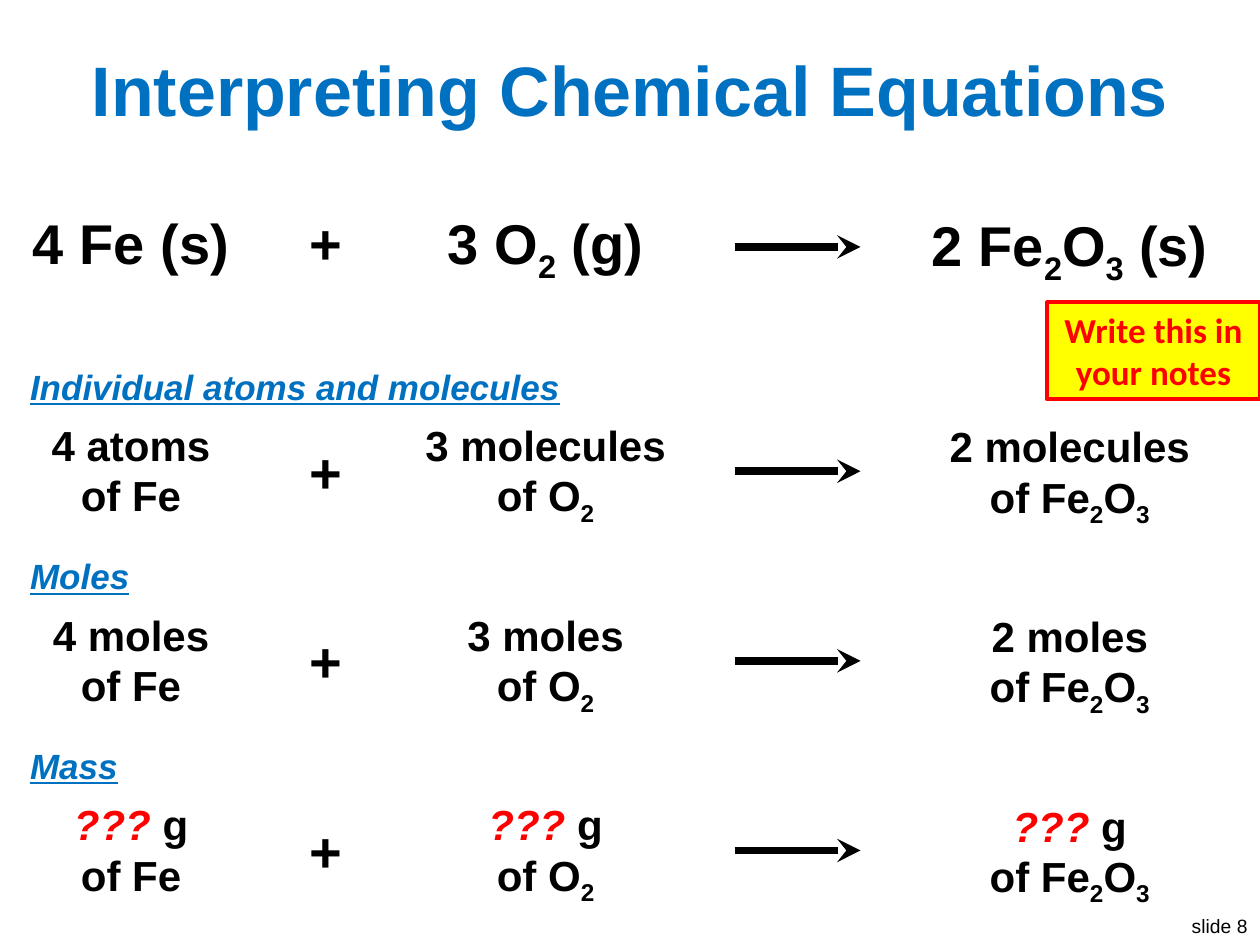
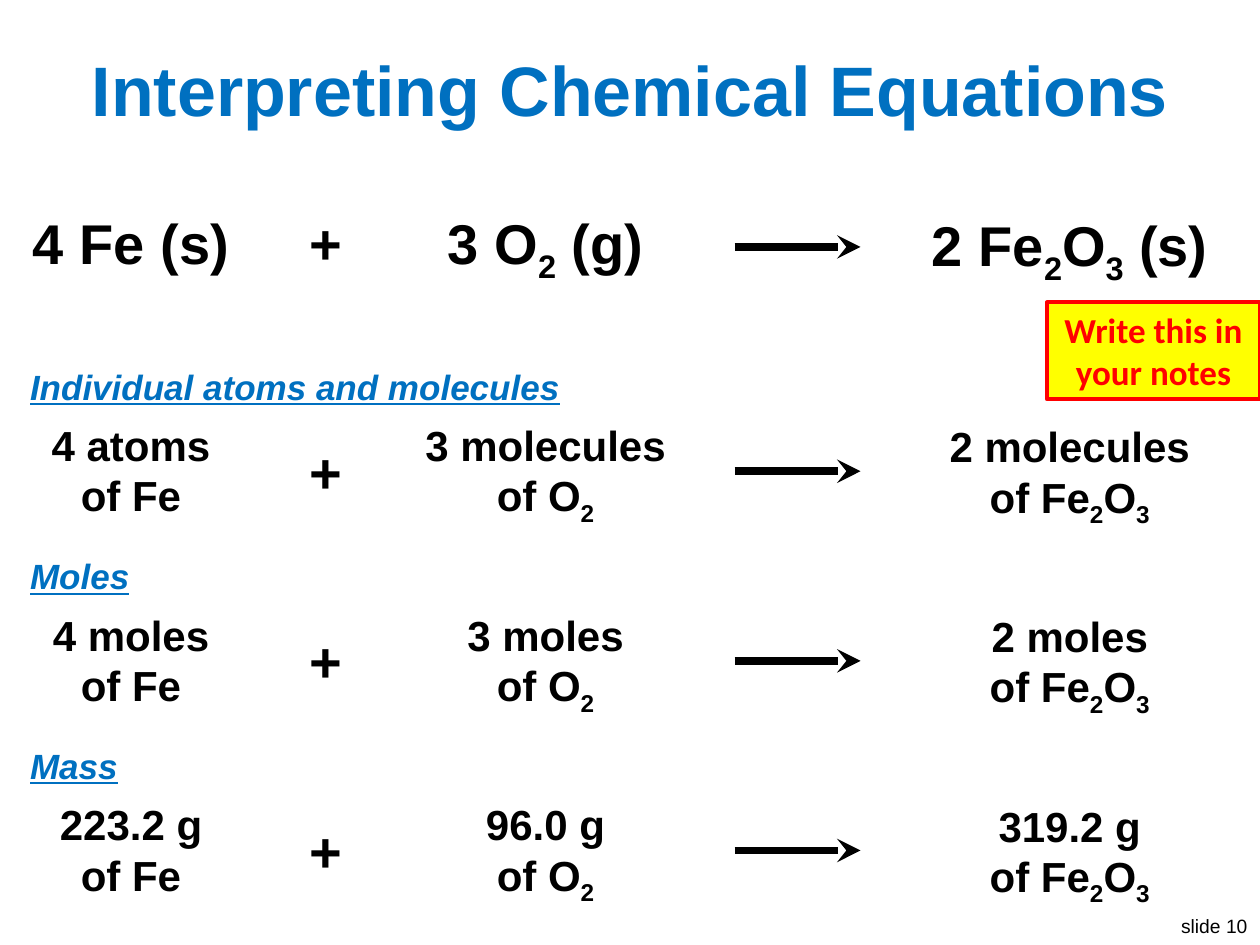
from lxml import etree
from pptx import Presentation
from pptx.dml.color import RGBColor
from pptx.enum.shapes import MSO_CONNECTOR, MSO_SHAPE
from pptx.enum.text import MSO_ANCHOR, MSO_AUTO_SIZE, PP_ALIGN
from pptx.oxml.ns import qn
from pptx.util import Inches, Pt

BLACK = RGBColor(0x00, 0x00, 0x00)
BLUE = RGBColor(0x00, 0x70, 0xC0)
RED = RGBColor(0xFF, 0x00, 0x00)
YELLOW = RGBColor(0xFF, 0xFF, 0x00)
WHITE = RGBColor(0xFF, 0xFF, 0xFF)

LEFT, CENTER, RIGHT = PP_ALIGN.LEFT, PP_ALIGN.CENTER, PP_ALIGN.RIGHT
MIDDLE = MSO_ANCHOR.MIDDLE
GROW = MSO_AUTO_SIZE.SHAPE_TO_FIT_TEXT
STRAIGHT = MSO_CONNECTOR.STRAIGHT
RECTANGLE = MSO_SHAPE.RECTANGLE

FE_CENTER, PLUS_CENTER, O2_CENTER, FE2O3_CENTER = 1.04, 2.59, 4.33, 8.49
TERM_CENTERS = (FE_CENTER, O2_CENTER, FE2O3_CENTER)
ARROW_START, ARROW_END = 5.83, 6.83
PRODUCT_DROP = 0.01
EQUATION_TOP = 1.61
FIRST_SECTION_TOP, SECTION_PITCH = 3.28, 1.505
UNKNOWN = "???"
SUBSTANCES = ("of Fe", "of O_2", "of Fe_2O_3")

EQUATION = (("4 Fe (s)", 1.77), ("3 O_2 (g)", 1.79), ("2 Fe_2O_3 (s)", 2.45))
ATOMS = ("Individual atoms and molecules", 4.44,
         (("4 atoms", 1.47), ("3 molecules", 2.13), ("2 molecules", 2.13)))
MOLES = ("Moles", 1, (("4 moles", 1.46), ("3 moles", 1.46), ("2 moles", 1.51)))
UNKNOWN_MASS = ("Mass", 0.9, (("??? g", 1.12), ("??? g", 1.12), ("??? g", 1.51)))
KNOWN_MASS = ("Mass", 0.9, (("223.2 g", 1.34), ("96.0 g", 1.16), ("319.2 g", 1.51)))


def add_run(paragraph, text):
    run = paragraph.add_run()
    run.text = text
    return run


def add_formula(paragraph, text):
    if text.startswith(UNKNOWN):
        unknown = add_run(paragraph, UNKNOWN)
        unknown.font.italic = True
        unknown.font.color.rgb = RED
        text = text.removeprefix(UNKNOWN)
    first, *subscripted = text.split("_")
    add_run(paragraph, first)
    for part in subscripted:
        subscript = add_run(paragraph, part[0])
        subscript.font._element.set("baseline", "-25000")
        if part[1:]:
            add_run(paragraph, part[1:])


def write_lines(frame, lines, size, color, align=CENTER, name="Arial", bold=True):
    for index, line in enumerate(lines):
        paragraph = frame.add_paragraph() if index else frame.paragraphs[0]
        paragraph.alignment = align
        font = paragraph.font
        font.name, font.size, font.bold = name, Pt(size), bold
        font.color.rgb = color
        add_formula(paragraph, line)


def add_text(shapes, left, top, width, height, lines, size, color=BLACK,
             align=CENTER, bold=True):
    box = shapes.add_textbox(Inches(left), Inches(top), Inches(width), Inches(height))
    box.text_frame.word_wrap = False
    box.text_frame.auto_size = GROW
    write_lines(box.text_frame, lines, size, color, align, bold=bold)
    return box


def add_arrow(shapes, y):
    arrow = shapes.add_connector(STRAIGHT, Inches(ARROW_START), Inches(y),
                                 Inches(ARROW_END), Inches(y))
    arrow.line.color.rgb = BLACK
    arrow.line.width = Pt(4.5)
    line = arrow.line._get_or_add_ln()
    etree.SubElement(line, qn("a:tailEnd"), type="stealth")
    etree.SubElement(arrow._element.spPr, qn("a:effectLst"))


def add_reaction(shapes, terms, top, height, size, plus_top, arrow_y):
    for index, ((lines, width), center) in enumerate(zip(terms, TERM_CENTERS)):
        term_top = top + (PRODUCT_DROP if index == 2 else 0)
        add_text(shapes, center - width / 2, term_top, width, height, lines, size)
    add_text(shapes, PLUS_CENTER - 0.23, plus_top, 0.46, 0.64, ["+"], 32)
    add_arrow(shapes, arrow_y)


def add_equation(slide):
    shapes = slide.shapes.add_group_shape().shapes
    terms = [([formula], width) for formula, width in EQUATION]
    add_reaction(shapes, terms, EQUATION_TOP, 0.64, 32,
                 EQUATION_TOP, EQUATION_TOP + 0.35)


def add_section(slide, section, top):
    heading, heading_width, amounts = section
    shapes = slide.shapes.add_group_shape().shapes
    terms = [([amount, substance], width)
             for (amount, width), substance in zip(amounts, SUBSTANCES)]
    add_reaction(shapes, terms, top, 0.91, 24, top + 0.14, top + 0.46)
    box = add_text(shapes, 0.14, top - 0.43, heading_width, 0.44, [heading], 20,
                   BLUE, LEFT)
    font = box.text_frame.paragraphs[0].font
    font.italic = font.underline = True


def add_title(slide, text):
    title = add_text(slide.shapes, 0.2, 0.3, 9.6, 0.8, [text], 40, BLUE)
    title.text_frame.word_wrap = True
    title.text_frame.auto_size = MSO_AUTO_SIZE.NONE
    title.text_frame.vertical_anchor = MIDDLE


def add_reminder(slide, text):
    reminder = slide.shapes.add_shape(RECTANGLE, Inches(8.31), Inches(2.4),
                                      Inches(1.69), Inches(0.77))
    reminder.shadow.inherit = False
    reminder.fill.solid()
    reminder.fill.fore_color.rgb = YELLOW
    reminder.line.color.rgb = RED
    reminder.line.width = Pt(2.25)
    reminder.text_frame.word_wrap = True
    reminder.text_frame.auto_size = GROW
    reminder.text_frame.vertical_anchor = MSO_ANCHOR.TOP
    write_lines(reminder.text_frame, [text], 20, RED, name="Calibri")


def add_equation_slide(presentation, number, mass):
    slide = presentation.slides.add_slide(presentation.slide_layouts[6])
    slide.background.fill.solid()
    slide.background.fill.fore_color.rgb = WHITE
    add_text(slide.shapes, 9.25, 7.21, 0.75, 0.29, [f"slide {number}"], 11,
             align=RIGHT, bold=False)
    add_title(slide, "Interpreting Chemical Equations")
    add_equation(slide)
    for index, section in enumerate((ATOMS, MOLES, mass)):
        add_section(slide, section, FIRST_SECTION_TOP + index * SECTION_PITCH)
    add_reminder(slide, "Write this in your notes")


def main():
    presentation = Presentation()
    presentation.slide_width = Inches(10)
    presentation.slide_height = Inches(7.5)
    add_equation_slide(presentation, 8, UNKNOWN_MASS)
    add_equation_slide(presentation, 10, KNOWN_MASS)
    presentation.save("out.pptx")


if __name__ == "__main__":
    main()
